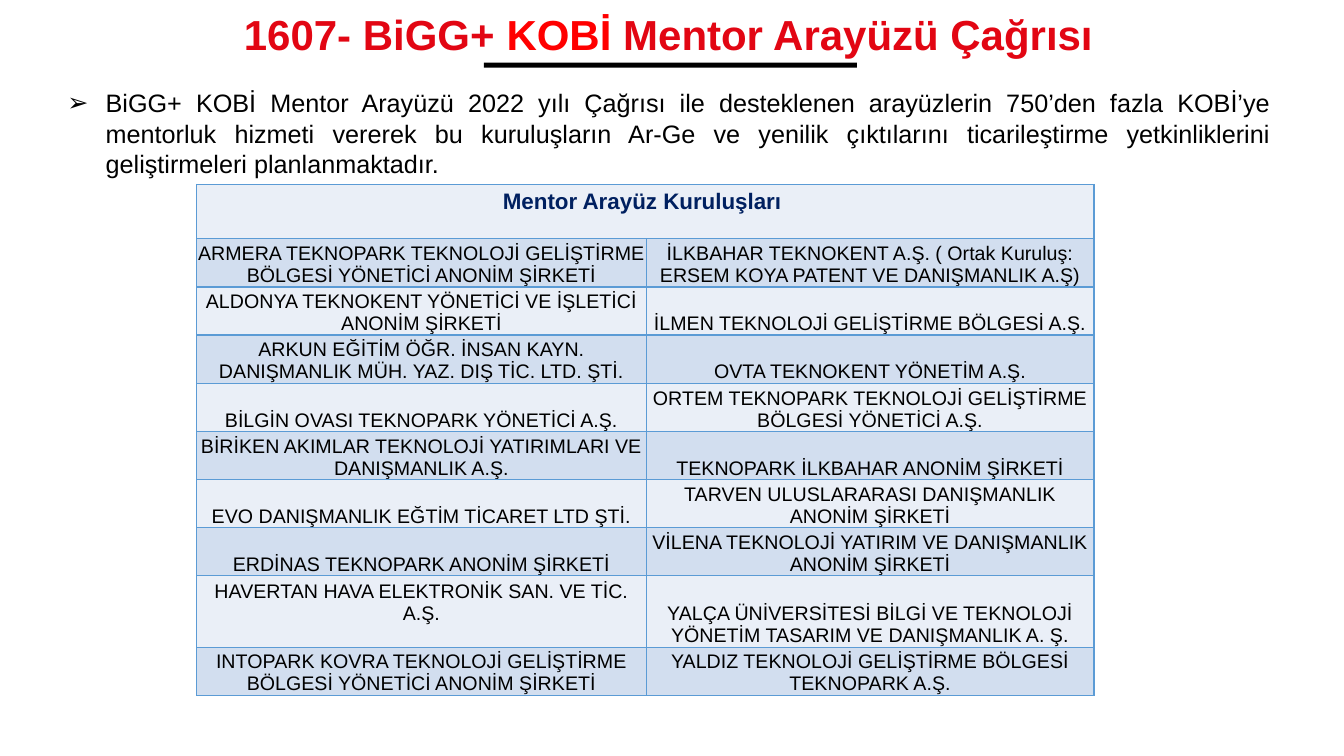
from lxml import etree
from pptx import Presentation
from pptx.dml.color import RGBColor
from pptx.enum.shapes import MSO_SHAPE
from pptx.enum.text import MSO_ANCHOR, MSO_AUTO_SIZE, PP_ALIGN
from pptx.oxml.ns import qn
from pptx.util import Inches, Pt

RECTANGLE = MSO_SHAPE.RECTANGLE
TOP, BOTTOM = MSO_ANCHOR.TOP, MSO_ANCHOR.BOTTOM
CENTER, JUSTIFY = PP_ALIGN.CENTER, PP_ALIGN.JUSTIFY
GROW = MSO_AUTO_SIZE.SHAPE_TO_FIT_TEXT

FONT = "Arial"
COLORS = {
    "title": "E20613",
    "highlight": "FF0000",
    "text": "000000",
    "heading": "002060",
    "border": "5B9BD5",
    "light": "EAEFF7",
    "dark": "D2DEEF",
}

TITLE = [
    ("1607- BiGG+ ", "title"),
    ("KOBİ ", "highlight"),
    ("Mentor Arayüzü Çağrısı", "title"),
]
SUMMARY = (
    "BiGG+ KOBİ Mentor Arayüzü 2022 yılı Çağrısı ile desteklenen arayüzlerin "
    "750’den fazla KOBİ’ye mentorluk hizmeti vererek bu kuruluşların Ar-Ge ve "
    "yenilik çıktılarını ticarileştirme yetkinliklerini geliştirmeleri planlanmaktadır."
)
HEADING = "Mentor Arayüz Kuruluşları "
MENTORS = [
    ("ARMERA TEKNOPARK TEKNOLOJİ GELİŞTİRME BÖLGESİ YÖNETİCİ ANONİM ŞİRKETİ",
     "İLKBAHAR TEKNOKENT A.Ş. ( Ortak Kuruluş: ERSEM KOYA PATENT VE DANIŞMANLIK A.Ş)"),
    ("ALDONYA TEKNOKENT YÖNETİCİ VE İŞLETİCİ ANONİM ŞİRKETİ",
     "İLMEN TEKNOLOJİ GELİŞTİRME BÖLGESİ A.Ş."),
    ("ARKUN EĞİTİM ÖĞR. İNSAN KAYN. DANIŞMANLIK MÜH. YAZ. DIŞ TİC. LTD. ŞTİ.",
     "OVTA TEKNOKENT YÖNETİM A.Ş."),
    ("BİLGİN OVASI TEKNOPARK YÖNETİCİ A.Ş.",
     "ORTEM TEKNOPARK TEKNOLOJİ GELİŞTİRME BÖLGESİ YÖNETİCİ A.Ş."),
    ("BİRİKEN AKIMLAR TEKNOLOJİ YATIRIMLARI VE DANIŞMANLIK A.Ş.",
     "TEKNOPARK İLKBAHAR ANONİM ŞİRKETİ"),
    ("EVO DANIŞMANLIK EĞTİM TİCARET LTD ŞTİ.",
     "TARVEN ULUSLARARASI DANIŞMANLIK ANONİM ŞİRKETİ"),
    ("ERDİNAS TEKNOPARK ANONİM ŞİRKETİ",
     "VİLENA TEKNOLOJİ YATIRIM VE DANIŞMANLIK ANONİM ŞİRKETİ"),
    ("HAVERTAN HAVA ELEKTRONİK SAN. VE TİC. A.Ş.",
     "YALÇA ÜNİVERSİTESİ BİLGİ VE TEKNOLOJİ YÖNETİM TASARIM VE DANIŞMANLIK A. Ş."),
    ("INTOPARK KOVRA TEKNOLOJİ GELİŞTİRME BÖLGESİ YÖNETİCİ ANONİM ŞİRKETİ",
     "YALDIZ TEKNOLOJİ GELİŞTİRME BÖLGESİ TEKNOPARK A.Ş."),
]
TALL_ROW = 8
HEADING_HEIGHT = 0.54
TALL_HEIGHT = 0.71


def color(name):
    return RGBColor.from_string(COLORS[name])


def style(paragraph, size, color_name=None, bold=False, alignment=CENTER):
    paragraph.alignment = alignment
    paragraph.font.name = FONT
    paragraph.font.size = Pt(size)
    paragraph.font.bold = bold
    if color_name:
        paragraph.font.color.rgb = color(color_name)


def add_text_frame(slide, box, wrap):
    frame = slide.shapes.add_textbox(*map(Inches, box)).text_frame
    frame.word_wrap = wrap
    frame.auto_size = GROW
    return frame


def add_title(slide, box):
    left, top, width, height = box
    title = add_text_frame(slide, box, False).paragraphs[0]
    title.line_spacing = 0.9
    style(title, 30, bold=True)
    for words, color_name in TITLE:
        run = title.add_run()
        run.text = words
        run.font.color.rgb = color(color_name)

    underline = slide.shapes.add_shape(
        RECTANGLE, Inches(left + 2.58), Inches(top + 0.53), Inches(3.7), Inches(0.05))
    underline.shadow.inherit = False
    underline.fill.solid()
    underline.fill.fore_color.rgb = color("text")
    underline.line.fill.background()


def add_summary(slide, box):
    summary = add_text_frame(slide, box, True).paragraphs[0]
    summary.text = SUMMARY
    properties = summary._p.get_or_add_pPr()
    properties.set("marL", str(Inches(0.38)))
    properties.set("indent", str(Inches(-0.38)))
    etree.SubElement(properties, qn("a:buFont"), typeface=FONT)
    etree.SubElement(properties, qn("a:buChar"), char="➢")
    style(summary, 18, "text", alignment=JUSTIFY)


def add_borders(cell):
    properties = cell._tc.get_or_add_tcPr()
    for side in ("lnL", "lnR", "lnT", "lnB"):
        line = etree.SubElement(properties, qn(f"a:{side}"), w=str(Pt(1)))
        fill = etree.SubElement(line, qn("a:solidFill"))
        etree.SubElement(fill, qn("a:srgbClr"), val=COLORS["border"])


def fill_mentor_cell(cell, mentor):
    cell.text = mentor
    cell.vertical_anchor = BOTTOM
    cell.margin_left = cell.margin_right = cell.margin_top = Inches(0.01)
    cell.margin_bottom = 0
    style(cell.text_frame.paragraphs[0], 14, "text")


def add_mentor_table(slide, box):
    height = box[3]
    table = slide.shapes.add_table(len(MENTORS) + 1, 2, *map(Inches, box)).table
    table.columns[0].width = Inches(4.46)
    table.columns[1].width = Inches(4.44)

    row_height = (height - HEADING_HEIGHT - TALL_HEIGHT) / (len(MENTORS) - 1)
    special_heights = {0: HEADING_HEIGHT, TALL_ROW: TALL_HEIGHT}
    for index, row in enumerate(table.rows):
        row.height = Inches(special_heights.get(index, row_height))
        for cell in row.cells:
            add_borders(cell)
            cell.fill.solid()
            cell.fill.fore_color.rgb = color("dark" if index % 2 else "light")

    heading = table.cell(0, 0)
    heading.merge(table.cell(0, 1))
    heading.text = HEADING
    style(heading.text_frame.paragraphs[0], 16, "heading", bold=True)

    for index, pair in enumerate(MENTORS, start=1):
        for column, mentor in enumerate(pair):
            fill_mentor_cell(table.cell(index, column), mentor)
    raised = table.cell(TALL_ROW, 0)
    raised.vertical_anchor = TOP
    raised.margin_top = Inches(0.05)


def main():
    presentation = Presentation()
    presentation.slide_width = Inches(13.33)
    presentation.slide_height = Inches(7.5)
    slide = presentation.slides.add_slide(presentation.slide_layouts[6])
    add_summary(slide, (0.57, 0.82, 12.13, 1.01))
    add_title(slide, (2.22, 0.09, 8.82, 0.56))
    add_mentor_table(slide, (1.95, 1.83, 8.9, 5.05))
    presentation.save("out.pptx")


if __name__ == "__main__":
    main()
